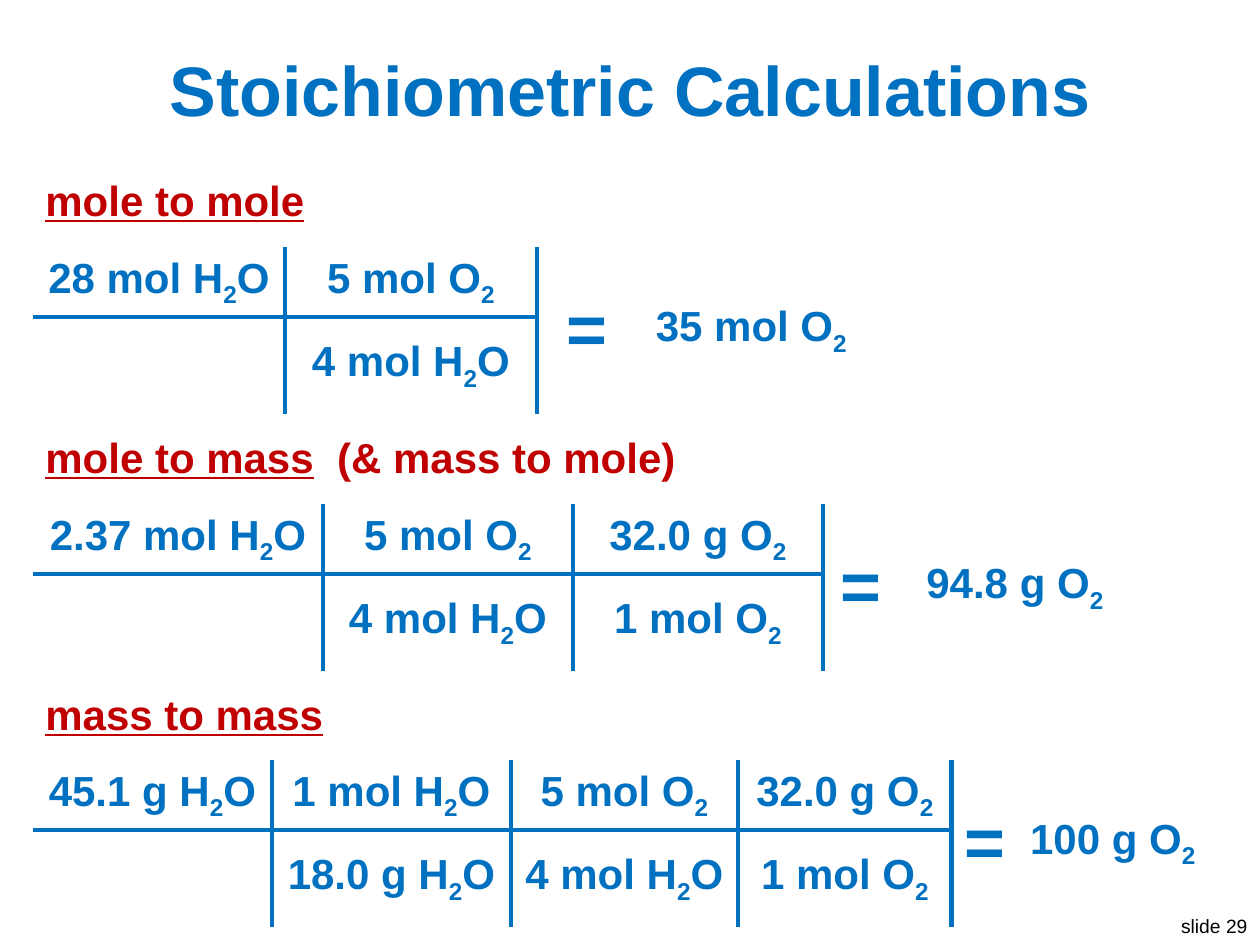
from lxml.etree import SubElement
from pptx import Presentation
from pptx.dml.color import RGBColor
from pptx.enum.text import MSO_ANCHOR, MSO_AUTO_SIZE, PP_ALIGN
from pptx.oxml import parse_xml
from pptx.oxml.ns import nsdecls, qn
from pptx.util import Pt

PX = 914400 // 126
BLUE, RED, BLACK = "0070C0", "C00000", "000000"
NO_STYLE = "{2D5ABB26-0587-4C30-8999-92F81FD0307C}"
ROWS = [66, 91]


def color(value):
    return RGBColor.from_string(value)


def add_run(p, text, size, rgb, baseline=0, **fmt):
    r = p.add_run()
    r.text = text
    for name, value in {"name": "Arial", "size": Pt(size), "bold": True, **fmt}.items():
        setattr(r.font, name, value)
    r.font.color.rgb = color(rgb)
    if baseline:
        r.font._element.set("baseline", str(baseline))


prs = Presentation()
prs.slide_width, prs.slide_height = 1260 * PX, 945 * PX
s = prs.slides.add_slide(prs.slide_layouts[6])

texts = [
    (1166, 908, 94, 37, PP_ALIGN.RIGHT, [("slide 29", 11, BLACK, {"bold": False})]),
    (25, 38, 1210, 101, PP_ALIGN.CENTER, [("Stoichiometric Calculations", 40, BLUE, {})]),
    (33, 168, 287, 63, PP_ALIGN.LEFT, [("mole to mole", 24, RED, {"underline": True})]),
    (33, 425, 673, 63, PP_ALIGN.LEFT, [("mole to mass", 24, RED, {"underline": True}),
                                       ("  (& mass to mole)", 24, RED, {})]),
    (33, 682, 306, 63, PP_ALIGN.LEFT, [("mass to mass", 24, RED, {"underline": True})]),
]
for x, y, w, h, align, runs in texts:
    tf = s.shapes.add_textbox(x * PX, y * PX, w * PX, h * PX).text_frame
    is_title = align == PP_ALIGN.CENTER
    tf.word_wrap = is_title
    tf.auto_size = MSO_AUTO_SIZE.NONE if is_title else MSO_AUTO_SIZE.SHAPE_TO_FIT_TEXT
    tf.vertical_anchor = MSO_ANCHOR.MIDDLE if is_title else MSO_ANCHOR.TOP
    p = tf.paragraphs[0]
    p.alignment = align
    for text, size, rgb, fmt in runs:
        add_run(p, text, size, rgb, **fmt)

calculations = [
    (247, [252, 252, 101, 227],
     ["28 mol H_2O", "5 mol O_2", "=", "35 mol O_2"],
     ["", "4 mol H_2O"]),
    (504, [290, 250, 250, 77, 230],
     ["2.37 mol H_2O", "5 mol O_2", "32.0 g O_2", "=", "94.8 g O_2"],
     ["", "4 mol H_2O", "1 mol O_2"]),
    (760, [239, 239, 227, 214, 60, 202],
     ["45.1 g H_2O", "1 mol H_2O", "5 mol O_2", "32.0 g O_2", "=", "100 g O_2"],
     ["", "18.0 g H_2O", "4 mol H_2O", "1 mol O_2"]),
]
for top, widths, numerators, denominators in calculations:
    frame = s.shapes.add_table(2, len(widths), 33 * PX, top * PX, sum(widths) * PX, sum(ROWS) * PX)
    table = frame.table
    table.first_row = table.horz_banding = False
    table._tbl.tblPr.find(qn("a:tableStyleId")).text = NO_STYLE
    for column, width in zip(table.columns, widths):
        column.width = width * PX
    for row, height in zip(table.rows, ROWS):
        row.height = height * PX

    factors = len(denominators)
    for col in range(factors, len(widths)):
        table.cell(0, col).merge(table.cell(1, col))

    for row, values in enumerate([numerators, denominators]):
        for col, value in enumerate(values):
            cell = table.cell(row, col)
            cell.vertical_anchor = MSO_ANCHOR.MIDDLE
            cell.fill.background()
            p = cell.text_frame.paragraphs[0]
            p.alignment = PP_ALIGN.CENTER
            if value:
                head, _, tail = value.partition("_")
                size = 40 if value == "=" else 24
                for text, baseline in [(head, 0), (tail[:1], -25000), (tail[1:], 0)]:
                    if text:
                        add_run(p, text, size, BLUE, baseline)
            if col >= factors:
                continue
            sides = {"L": col > 0, "R": col < factors - 1, "T": row == 1, "B": row == 0}
            tcPr = cell._tc.get_or_add_tcPr()
            for i, side in enumerate(side for side, drawn in sides.items() if drawn):
                ln = parse_xml(f'<a:ln{side} {nsdecls("a")} w="{Pt(3)}"/>')
                fill = SubElement(ln, qn("a:solidFill"))
                SubElement(fill, qn("a:srgbClr"), val=BLUE)
                tcPr.insert(i, ln)

prs.save("out.pptx")
